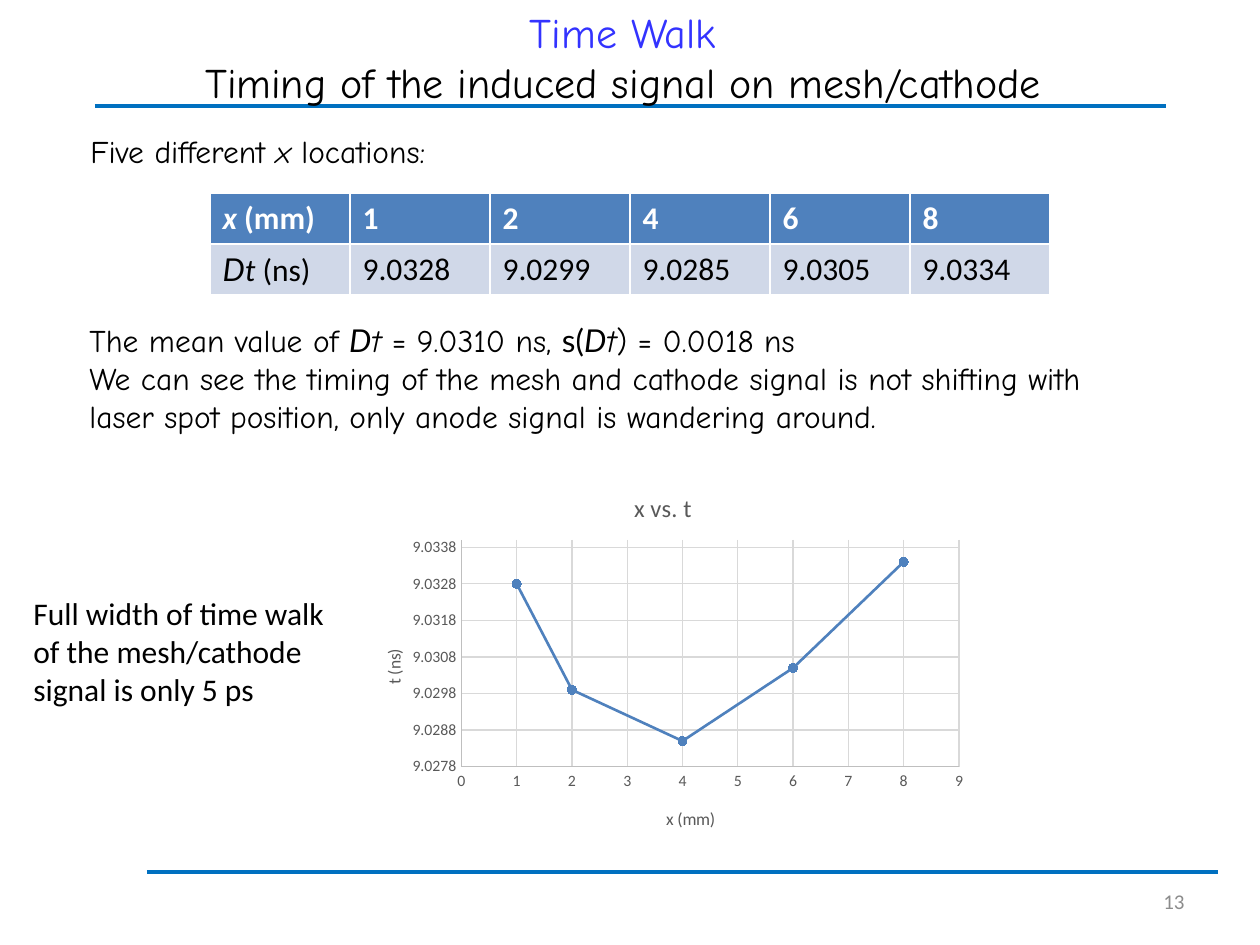
from dataclasses import dataclass
from typing import Optional

from lxml import etree
from pptx import Presentation
from pptx import util as u
from pptx.chart import data as chart_data
from pptx.dml import color
from pptx.enum import chart as charts, shapes, text
from pptx.oxml import ns

PX_PER_INCH = 126
COLORS = {
    "ink": "000000", "title": "3333FF", "rule": "0070C0", "blue": "4F81BD",
    "band": "D0D8E8", "white": "FFFFFF", "page_number": "8C8C8C",
    "label": "595959", "axis": "BFBFBF", "grid": "D9D9D9",
}
COMIC, CALIBRI, LATO = "Comic Neue", "Calibri", "Lato"
LEFT, CENTER, RIGHT = text.PP_ALIGN.LEFT, text.PP_ALIGN.CENTER, text.PP_ALIGN.RIGHT
X_MM = [1, 2, 4, 6, 8]
DELTA_T = [9.0328, 9.0299, 9.0285, 9.0305, 9.0334]


@dataclass
class Span:
    words: str
    font: str = COMIC
    italic: bool = False
    bold: bool = False
    color: str = "ink"
    size: int = 18


@dataclass
class Box:
    left: int
    top: int
    width: int
    height: int
    paras: list[list[Span]]
    align: text.PP_ALIGN = LEFT
    anchor: text.MSO_ANCHOR = text.MSO_ANCHOR.TOP


@dataclass
class Rule:
    left: int
    top: int
    width: int


@dataclass
class AxisLook:
    title: str
    low: float
    high: float
    step: float
    number_format: str
    title_left: float
    title_top: float
    rotation: int = 0


RULES = [Rule(147, 872, 1071), Rule(95, 106, 1071)]
BOXES = [
    Box(63, 0, 1120, 115, [
        [Span("Time Walk", color="title", size=24)],
        [Span("Timing of the induced signal on mesh/cathode", size=24)],
    ], CENTER),
    Box(78, 126, 1089, 50, [
        [Span("Five different "), Span("x", italic=True), Span(" locations:")],
    ]),
    Box(77, 315, 1040, 127, [
        [Span("The mean value of "), Span("D", LATO, True), Span("t", italic=True),
         Span(" = 9.0310 ns, "), Span("s(", LATO), Span("D", LATO, True),
         Span("t", italic=True), Span(") = 0.0018 ns")],
        [Span("We can see the timing of the mesh and cathode signal is not shifting "
              "with laser spot position, only anode signal is wandering around.")],
    ]),
    Box(903, 876, 294, 50, [[Span("13", CALIBRI, color="page_number", size=12)]],
        RIGHT, text.MSO_ANCHOR.MIDDLE),
    Box(21, 588, 347, 127, [
        [Span("Full width of time walk of the mesh/cathode signal is only 5 ps", CALIBRI)],
    ]),
]
X_AXIS = AxisLook("x (mm)", 0, 9, 1, "0", 0.5, 0.88)
T_AXIS = AxisLook("t (ns)", 9.0278, 9.034, 0.001, "0.0000", 0.05, 0.46, -90)


def px(length: int) -> u.Emu:
    return u.Emu(round(length * 914400 / PX_PER_INCH))


def rgb(name: str) -> color.RGBColor:
    return color.RGBColor.from_string(COLORS[name])


def style_font(font, span: Span) -> None:
    font.name, font.size = span.font, u.Pt(span.size)
    font.bold, font.italic = span.bold, span.italic
    font.color.rgb = rgb(span.color)


def add_spans(para, spans: list[Span]) -> None:
    for span in spans:
        run = para.add_run()
        run.text = span.words
        style_font(run.font, span)


def draw_rule(page, rule: Rule) -> None:
    line = page.shapes.add_connector(
        shapes.MSO_CONNECTOR.STRAIGHT, px(rule.left), px(rule.top),
        px(rule.left + rule.width), px(rule.top))
    line.line.color.rgb = rgb("rule")
    line.line.width = u.Pt(2)
    etree.SubElement(line._element.spPr, ns.qn("a:effectLst"))


def draw_box(page, box: Box) -> None:
    frame = page.shapes.add_textbox(
        px(box.left), px(box.top), px(box.width), px(box.height)).text_frame
    frame.word_wrap = True
    frame.vertical_anchor = box.anchor
    for index, spans in enumerate(box.paras):
        para = frame.add_paragraph() if index else frame.paragraphs[0]
        para.alignment = box.align
        add_spans(para, spans)


def draw_table(page) -> None:
    header = [[Span("x", CALIBRI, True, True, "white"),
               Span(" (mm)", CALIBRI, False, True, "white")]]
    header += [[Span(str(x), CALIBRI, bold=True, color="white")] for x in X_MM]
    values = [[Span("D", LATO, True), Span("t", CALIBRI, True), Span(" (ns)", CALIBRI)]]
    values += [[Span(f"{t:.4f}", CALIBRI)] for t in DELTA_T]
    table = page.shapes.add_table(
        2, len(header), px(210), px(193), px(840), px(102)).table
    for row, (cells, fill) in enumerate([(header, "blue"), (values, "band")]):
        for column, spans in enumerate(cells):
            cell = table.cell(row, column)
            cell.fill.solid()
            cell.fill.fore_color.rgb = rgb(fill)
            add_spans(cell.text_frame.paragraphs[0], spans)


def place(parent, left: float, top: float,
          width: Optional[float] = None, height: Optional[float] = None) -> None:
    layout = parent.find(ns.qn("c:layout"))
    if layout is None:
        layout = etree.Element(ns.qn("c:layout"))
        parent.insert(0 if parent.find(ns.qn("c:tx")) is None else 1, layout)
    manual = etree.SubElement(layout, ns.qn("c:manualLayout"))
    settings = [("xMode", "edge"), ("yMode", "edge"), ("x", left), ("y", top)]
    if width is not None:
        settings = [("layoutTarget", "inner"), *settings, ("w", width), ("h", height)]
    for tag, value in settings:
        etree.SubElement(manual, ns.qn(f"c:{tag}")).set("val", str(value))


def style_axis(axis, look: AxisLook) -> None:
    axis.minimum_scale, axis.maximum_scale = look.low, look.high
    axis.major_unit = look.step
    axis.major_tick_mark = axis.minor_tick_mark = charts.XL_TICK_MARK.NONE
    axis.has_major_gridlines = True
    for line, name in [(axis.format.line, "axis"),
                       (axis.major_gridlines.format.line, "grid")]:
        line.color.rgb = rgb(name)
        line.width = u.Pt(0.75)
    labels = axis.tick_labels
    labels.number_format = look.number_format
    labels.number_format_is_linked = False
    style_font(labels.font, Span("", CALIBRI, color="label", size=9))
    frame = axis.axis_title.text_frame
    add_spans(frame.paragraphs[0], [Span(look.title, CALIBRI, color="label", size=10)])
    frame._txBody.bodyPr.set("rot", str(look.rotation * 60000))
    place(axis.axis_title._element, look.title_left, look.title_top)


def draw_chart(page) -> None:
    data = chart_data.XyChartData()
    points = data.add_series("x vs. t")
    for x, t in zip(X_MM, DELTA_T):
        points.add_data_point(x, t)
    chart = page.shapes.add_chart(
        charts.XL_CHART_TYPE.XY_SCATTER_LINES, px(348), px(472), px(630), px(378),
        data).chart
    style_font(chart.font, Span("", CALIBRI, size=10))
    chart.has_legend = False
    chart.has_title = True
    add_spans(chart.chart_title.text_frame.paragraphs[0],
              [Span("x vs. t", CALIBRI, color="label", size=14)])
    style_axis(chart.category_axis, X_AXIS)
    style_axis(chart.value_axis, T_AXIS)
    place(chart._chartSpace.chart.plotArea, 0.18, 0.18, 0.79, 0.6)
    plot = chart.plots[0]
    plot.vary_by_categories = False
    series = plot.series[0]
    series.smooth = False
    series.format.line.color.rgb = rgb("blue")
    series.format.line.width = u.Pt(1.5)
    series.marker.style = charts.XL_MARKER_STYLE.CIRCLE
    series.marker.size = 5
    series.marker.format.fill.solid()
    series.marker.format.fill.fore_color.rgb = rgb("blue")
    series.marker.format.line.color.rgb = rgb("blue")


def main() -> None:
    deck = Presentation()
    deck.slide_width, deck.slide_height = px(1260), px(945)
    page = deck.slides.add_slide(deck.slide_layouts[6])
    for rule in RULES:
        draw_rule(page, rule)
    for box in BOXES:
        draw_box(page, box)
    draw_table(page)
    draw_chart(page)
    deck.save("out.pptx")


if __name__ == "__main__":
    main()
